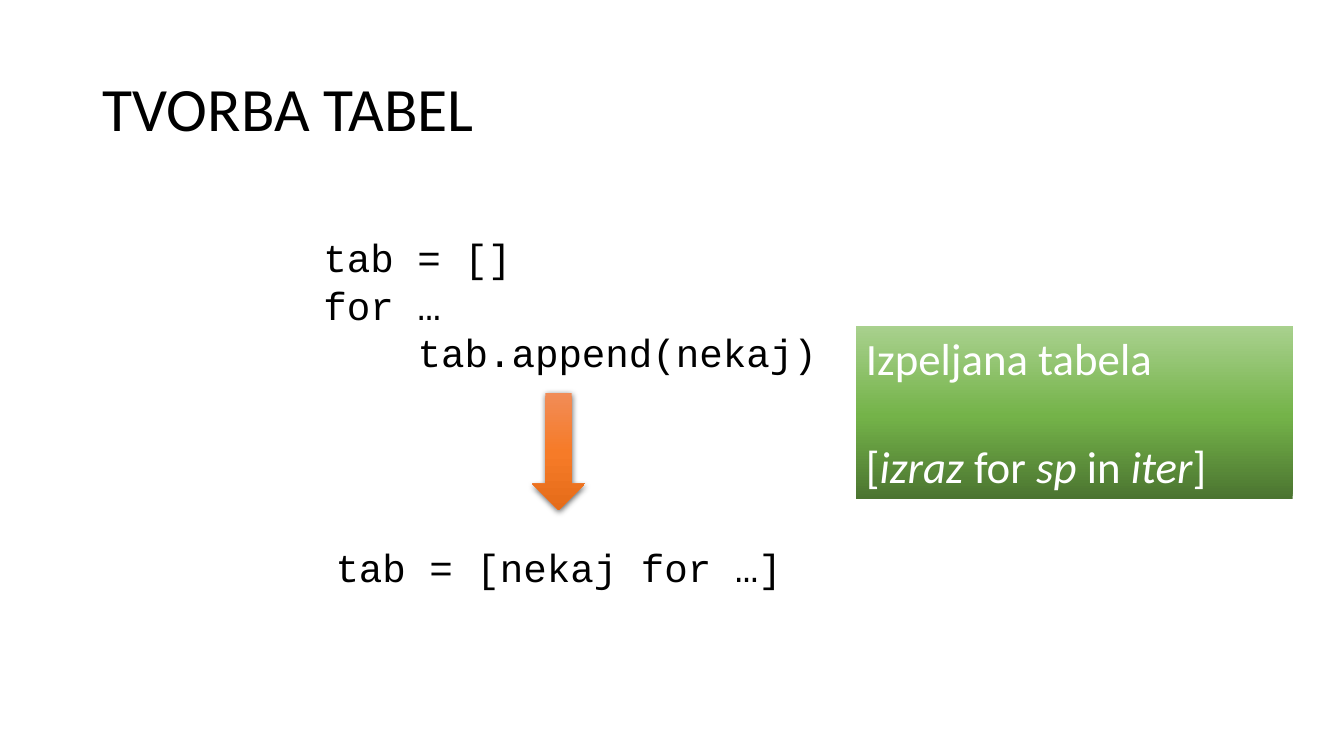
from lxml.etree import SubElement
from pptx import Presentation
from pptx.dml.color import RGBColor
from pptx.enum.shapes import MSO_SHAPE
from pptx.enum.text import MSO_ANCHOR, PP_ALIGN
from pptx.oxml.ns import qn
from pptx.util import Inches, Pt


def color(hex_code):
    return RGBColor.from_string(hex_code)


class CodeSlide:
    """Style and drawing methods for the slide being built."""

    body_font = "Calibri"
    code_font = "Courier New"
    ink = "000000"
    code_size = 28
    code_indent = 4 * 0.6 * code_size

    def __init__(self, slide):
        self.slide = slide

    def style(self, paragraph, font, size, ink):
        paragraph.alignment = PP_ALIGN.LEFT
        paragraph.font.name = font
        paragraph.font.size = Pt(size)
        paragraph.font.color.rgb = color(ink)

    def text_box(self, box, lines, font, size, anchor=MSO_ANCHOR.TOP):
        frame = self.slide.shapes.add_textbox(*map(Inches, box)).text_frame
        frame.word_wrap = True
        frame.vertical_anchor = anchor
        frame.text = "\n".join(lines)
        for paragraph in frame.paragraphs:
            self.style(paragraph, font, size, self.ink)
        return frame

    def title(self, box, text):
        heading = self.text_box(box, [text], self.body_font, 44, MSO_ANCHOR.MIDDLE)
        heading.paragraphs[0].line_spacing = 0.9

    def code(self, box, *lines):
        return self.text_box(box, lines, self.code_font, self.code_size)

    def indent(self, paragraph):
        paragraph._p.get_or_add_pPr().set("marL", str(Pt(self.code_indent)))

    def gradient_shape(self, preset, box, stops, angle):
        shape = self.slide.shapes.add_shape(preset, *map(Inches, box))
        shape.shadow.inherit = False
        shape.line.fill.background()
        shape.fill.gradient()
        gradient = shape._element.spPr.find(qn("a:gradFill"))
        gradient.find(qn("a:lin")).set("ang", str(angle * 60000))
        stop_list = gradient.find(qn("a:gsLst"))
        stop_list.clear()
        for position, hex_code in stops:
            stop = SubElement(stop_list, qn("a:gs"), pos=str(position * 1000))
            SubElement(stop, qn("a:srgbClr"), val=hex_code)
        return shape

    def arrow(self, box, stops):
        arrow = self.gradient_shape(MSO_SHAPE.DOWN_ARROW, box, stops, 90)
        effects = arrow._element.spPr.find(qn("a:effectLst"))
        shadow = SubElement(effects, qn("a:outerShdw"), blurRad=str(Pt(4.5)),
                            dist=str(Pt(1.5)), dir="5400000", algn="ctr", rotWithShape="0")
        shade = SubElement(shadow, qn("a:srgbClr"), val=self.ink)
        SubElement(shade, qn("a:alpha"), val="63000")

    def syntax_panel(self, box, stops, heading, pattern):
        panel = self.gradient_shape(MSO_SHAPE.RECTANGLE, box, stops, 270)
        frame = panel.text_frame
        frame.word_wrap = True
        frame.vertical_anchor = MSO_ANCHOR.TOP
        frame.text = heading
        syntax = frame.add_paragraph()
        syntax.space_before = Pt(39)
        for text, italic in pattern:
            run = syntax.add_run()
            run.text = text
            run.font.italic = italic
        for paragraph in frame.paragraphs:
            self.style(paragraph, self.body_font, 32, "FFFFFF")


def main():
    deck = Presentation()
    deck.slide_width, deck.slide_height = Inches(13.33), Inches(7.5)
    page = CodeSlide(deck.slides.add_slide(deck.slide_layouts[6]))

    page.title((0.92, 0.38, 11.5, 1.45), "TVORBA TABEL")
    loop = page.code((3.11, 2.27, 5.82, 1.51), "tab = []", "for …", "tab.append(nekaj)")
    page.indent(loop.paragraphs[2])
    page.code((3.23, 5.34, 5.14, 0.57), "tab = [nekaj for …]")
    page.arrow((5.28, 3.9, 0.52, 1.16), [(0, "F18C57"), (50, "F67B28"), (100, "E56C19")])
    page.syntax_panel(
        (8.49, 3.23, 4.33, 1.72),
        [(0, "4B7430"), (48, "74B349"), (100, "A9D18E")],
        "Izpeljana tabela",
        [("[", False), ("izraz", True), (" for ", False), ("sp", True),
         (" in ", False), ("iter", True), ("]", False)],
    )
    deck.save("out.pptx")


if __name__ == "__main__":
    main()
